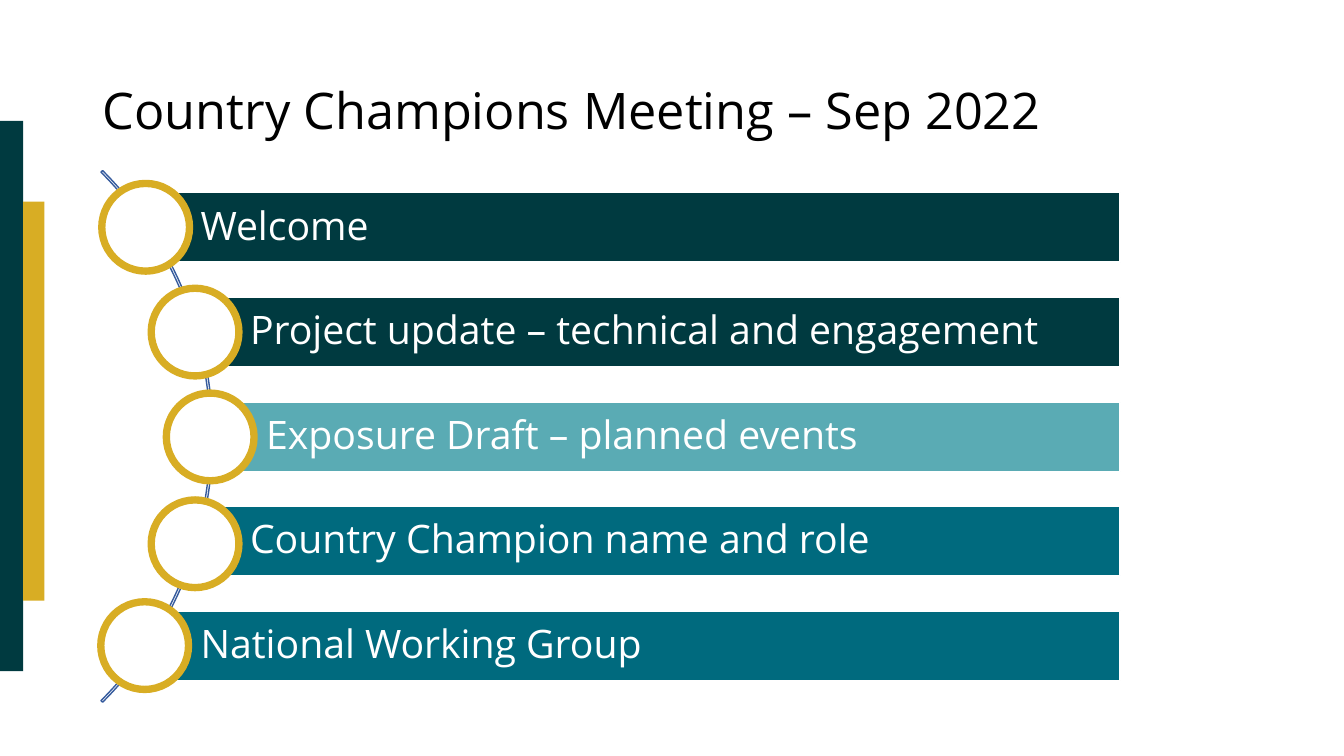
"""Builds the agenda slide of the Country Champions Meeting."""
from dataclasses import dataclass

from pptx import Presentation
from pptx import util as u
from pptx.dml.color import RGBColor
from pptx.enum import shapes, text

PX = 9144


@dataclass(frozen=True)
class Theme:
    font: str = "Open Sans"
    title_size: int = 36
    item_size: int = 28
    black: str = "000000"
    white: str = "FFFFFF"
    dark: str = "003A40"
    teal: str = "006A7E"
    light: str = "5AABB4"
    gold: str = "D8AD24"
    blue: str = "365B9D"


T = Theme()
SHAPE = shapes.MSO_SHAPE
BARS_TOP, BAR_PITCH, BAR_HEIGHT, BARS_RIGHT = 191, 103.75, 69, 1111
CIRCLE = 87
AGENDA = [
    ("Welcome", T.dark, 144, (101, 182)),
    ("Project update – technical and engagement", T.dark, 193, (150, 286)),
    ("Exposure Draft – planned events", T.light, 209, (165, 390)),
    ("Country Champion name and role", T.teal, 193, (150, 496)),
    ("National Working Group", T.teal, 144, (100, 597)),
]


def px(*lengths):
    return [u.Emu(n * PX) for n in lengths]


def add_shape(s, kind, box, fill=None, line=None, width=1):
    sp = s.shapes.add_shape(kind, *px(*box))
    sp.shadow.inherit = False
    if fill:
        sp.fill.solid()
        sp.fill.fore_color.rgb = RGBColor.from_string(fill)
    else:
        sp.fill.background()
    if line:
        sp.line.color.rgb = RGBColor.from_string(line)
        sp.line.width = u.Pt(width)
    else:
        sp.line.fill.background()
    return sp


def set_text(sp, words, size, color, insets):
    tf = sp.text_frame
    tf.word_wrap = True
    tf.vertical_anchor = text.MSO_ANCHOR.MIDDLE
    tf.margin_left, tf.margin_top, tf.margin_right, tf.margin_bottom = px(*insets)
    p = tf.paragraphs[0]
    p.text = words
    p.alignment = text.PP_ALIGN.LEFT
    p.line_spacing = 0.9
    p.font.name = T.font
    p.font.size = u.Pt(size)
    p.font.color.rgb = RGBColor.from_string(color)


def add_arc(s):
    arc = add_shape(s, SHAPE.BLOCK_ARC, (-535, 60, 746, 746), line=T.blue)
    for i, value in enumerate((189, 27, 0.003)):
        arc.adjustments[i] = value


def add_item(s, row, words, fill, left, circle_at):
    top = BARS_TOP + round(row * BAR_PITCH)
    box = (left, top, BARS_RIGHT - left, BAR_HEIGHT)
    bar = add_shape(s, SHAPE.RECTANGLE, box, fill, T.white)
    set_text(bar, words, T.item_size, T.white, (55, 8, 8, 8))
    add_shape(s, SHAPE.OVAL, (*circle_at, CIRCLE, CIRCLE), T.white, T.gold, 5.25)


def main():
    prs = Presentation()
    prs.slide_width, prs.slide_height = u.Inches(13.33), u.Inches(7.5)
    s = prs.slides.add_slide(prs.slide_layouts[6])
    add_shape(s, SHAPE.RECTANGLE, (0, 120, 23, 546), T.dark)
    add_shape(s, SHAPE.RECTANGLE, (23, 200, 21, 396), T.gold)
    title = s.shapes.add_textbox(*px(92, 40, 1150, 145))
    set_text(title, "Country Champions Meeting – Sep 2022", T.title_size, T.black, (10, 5, 10, 5))
    add_arc(s)
    for row, item in enumerate(AGENDA):
        add_item(s, row, *item)
    prs.save("out.pptx")


if __name__ == "__main__":
    main()
